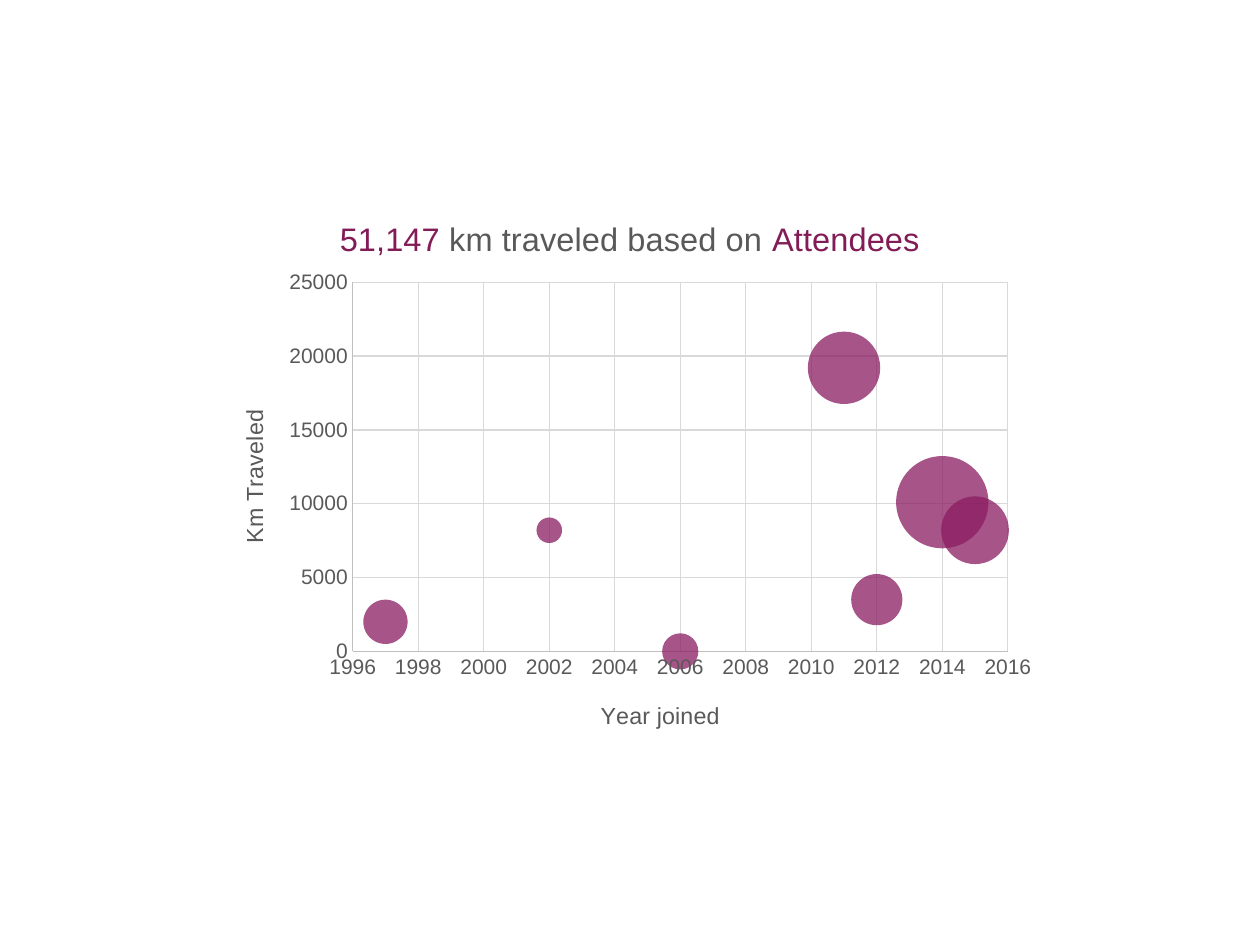
from lxml import etree
from pptx import Presentation
from pptx import util as u
from pptx.chart.data import BubbleChartData
from pptx.dml.color import RGBColor
from pptx.enum import chart as kinds
from pptx.oxml import ns

PLUM = RGBColor(0x8A, 0x1B, 0x61)
TITLE_PLUM = RGBColor(0x82, 0x1C, 0x56)
GRAY = RGBColor(0x59, 0x59, 0x59)
AXIS_GRAY = RGBColor(0xBF, 0xBF, 0xBF)
GRID_GRAY = RGBColor(0xD9, 0xD9, 0xD9)

TRIPS = [
    (1997, 2000, 3),
    (2002, 8200, 1),
    (2006, 0, 2),
    (2011, 19200, 8),
    (2012, 3500, 4),
    (2014, 10100, 13),
    (2015, 8200, 7),
]


class Page:
    font = "Arial"
    title_size = 18.6
    axis_title_size = 13.3
    tick_size = 12

    def __init__(self, deck):
        self.deck = deck
        self.slide = deck.slides.add_slide(deck.slide_layouts[6])

    def bubbles(self, left, top, width, height, points):
        data = BubbleChartData()
        series = data.add_series("Series 1")
        for point in points:
            series.add_data_point(*point)
        wide, high = self.deck.slide_width, self.deck.slide_height
        frame = self.slide.shapes.add_chart(
            kinds.XL_CHART_TYPE.BUBBLE, int(left * wide), int(top * high),
            int(width * wide), int(height * high), data)
        chart = frame.chart
        chart.has_legend = False
        chart.font.name = self.font
        chart.font.size = u.Pt(10)
        plot = chart.plots[0]
        plot.bubble_scale = 100
        fill = plot.series[0].format.fill
        fill.solid()
        fill.fore_color.rgb = PLUM
        color = plot.series[0]._element.find(".//" + ns.qn("a:srgbClr"))
        etree.SubElement(color, ns.qn("a:alpha"), val="75000")
        plot.series[0].format.line.fill.background()
        return chart

    def place(self, parent, x, y, size=None):
        for old in parent.findall(ns.qn("c:layout")):
            parent.remove(old)
        layout = etree.Element(ns.qn("c:layout"))
        manual = etree.SubElement(layout, ns.qn("c:manualLayout"))
        values = {"xMode": "edge", "yMode": "edge", "x": x, "y": y}
        if size:
            values = {"layoutTarget": "inner", **values, "w": size[0], "h": size[1]}
        for name, value in values.items():
            etree.SubElement(manual, ns.qn("c:" + name), val=str(value))
        parent.insert(0 if size else 1, layout)

    def title(self, owner, spans, size, x, y):
        owner.has_title = True
        heading = owner.chart_title if hasattr(owner, "chart_title") else owner.axis_title
        para = heading.text_frame.paragraphs[0]
        para.font.name = self.font
        para.font.size = u.Pt(size)
        para.font.bold = False
        para.font.color.rgb = GRAY
        for words, color in spans:
            span = para.add_run()
            span.text = words
            span.font.color.rgb = color
        self.place(heading._element, x, y)

    def axis(self, axis, low, high, step, words, x, y):
        axis.minimum_scale, axis.maximum_scale, axis.major_unit = low, high, step
        axis.major_tick_mark = axis.minor_tick_mark = kinds.XL_TICK_MARK.NONE
        axis.has_major_gridlines = True
        for line, color in ((axis.format.line, AXIS_GRAY),
                            (axis.major_gridlines.format.line, GRID_GRAY)):
            line.color.rgb = color
            line.width = u.Pt(0.75)
        font = axis.tick_labels.font
        font.name = self.font
        font.size = u.Pt(self.tick_size)
        font.color.rgb = GRAY
        axis.tick_labels.number_format = "General"
        axis.tick_labels.number_format_is_linked = False
        self.title(axis, [(words, GRAY)], self.axis_title_size, x, y)


def main():
    deck = Presentation()
    deck.slide_width, deck.slide_height = u.Inches(10), u.Inches(7.5)
    page = Page(deck)
    chart = page.bubbles(1 / 6, 0.204, 2 / 3, 0.592, TRIPS)
    page.title(chart, [("51,147", TITLE_PLUM), (" km traveled based on ", GRAY),
                       ("Attendees", TITLE_PLUM)], page.title_size, 0.15, 0.04)
    page.axis(chart.category_axis, 1996, 2016, 2, "Year joined", 0.46, 0.9)
    page.axis(chart.value_axis, 0, 25000, 5000, "Km Traveled", 0.03, 0.38)
    chart.value_axis.axis_title.text_frame._txBody.bodyPr.set("rot", "-5400000")
    plot_area = chart._chartSpace.find(".//" + ns.qn("c:plotArea"))
    page.place(plot_area, 0.17, 0.16, (0.78, 0.66))
    deck.save("out.pptx")


if __name__ == "__main__":
    main()
